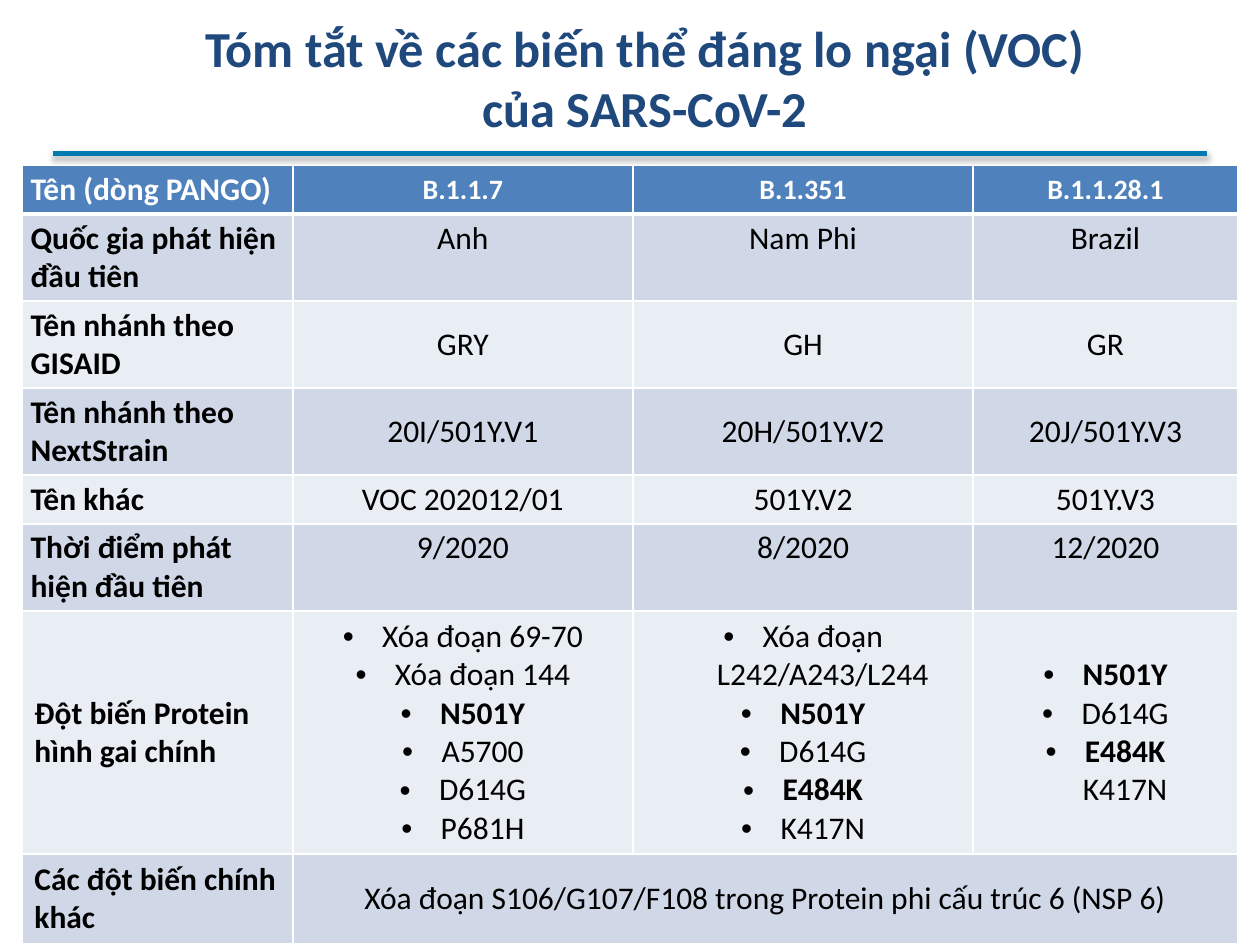
import pptx
import pptx.dml.color
import pptx.enum.shapes
import pptx.enum.text
import pptx.oxml
import pptx.oxml.ns
import pptx.util

Pt = pptx.util.Pt
RGB = pptx.dml.color.RGBColor
ALIGN = pptx.enum.text.PP_ALIGN
ANCHOR = pptx.enum.text.MSO_ANCHOR

WHITE = RGB(0xFF, 0xFF, 0xFF)
BLACK = RGB(0, 0, 0)
NAVY = RGB(0x1F, 0x49, 0x7D)
TEAL = RGB(0x00, 0x7A, 0xB0)
HEADER = RGB(0x4F, 0x81, 0xBD)
BAND_DARK = RGB(0xD0, 0xD8, 0xE8)
BAND_LIGHT = RGB(0xE9, 0xED, 0xF4)
FONT = "Calibri"
NS = pptx.oxml.ns.nsdecls("a")

COL_WIDTHS = [154.8, 194.4, 194.4, 151.2]
ROW_HEIGHTS = [27.5, 48.5, 49.5, 49.5, 27.5, 49.5, 139, 50.4]
ROWS = [
    ["Tên (dòng PANGO)", "B.1.1.7", "B.1.351", "B.1.1.28.1"],
    ["Quốc gia phát hiện đầu tiên", "Anh", "Nam Phi", "Brazil"],
    ["Tên nhánh theo GISAID", "GRY", "GH", "GR"],
    ["Tên nhánh theo NextStrain", "20I/501Y.V1", "20H/501Y.V2", "20J/501Y.V3"],
    ["Tên khác", "VOC 202012/01", "501Y.V2", "501Y.V3"],
    ["Thời điểm phát hiện đầu tiên", "9/2020", "8/2020", "12/2020"],
    ["Đột biến Protein hình gai chính",
     ["Xóa đoạn 69-70", "Xóa đoạn 144", "N501Y", "A5700", "D614G", "P681H"],
     ["Xóa đoạn L242/A243/L244", "N501Y", "D614G", "E484K", "K417N"],
     ["N501Y", "D614G", "E484K\vK417N"]],
    ["Các đột biến chính khác",
     "Xóa đoạn S106/G107/F108 trong Protein phi cấu trúc 6 (NSP 6)"],
]
KEY_MUTATIONS = {"N501Y", "E484K"}
TOP_ROWS = {1, 4, 5}  # rows whose values sit at the top of the cell
NARROW_LABEL_ROWS = range(6)


def set_font(font, size, color, bold):
    for name, value in dict(name=FONT, size=Pt(size), bold=bold).items():
        setattr(font, name, value)
    font.color.rgb = color


def add_title(s, x, y, w, h):
    title = s.shapes.title
    title.left, title.top, title.width, title.height = map(Pt, (x, y, w, h))
    tf = title.text_frame
    tf.vertical_anchor = ANCHOR.MIDDLE
    tf.auto_size = pptx.enum.text.MSO_AUTO_SIZE.NONE
    p = tf.paragraphs[0]
    p.text = "Tóm tắt về các biến thể đáng lo ngại (VOC)\vcủa SARS-CoV-2"
    p.alignment = ALIGN.CENTER
    for r in p.runs:
        set_font(r.font, 28.8, NAVY, True)


def add_rule(s, x, y, w):
    """Draw the shadowed line under the title."""
    line = s.shapes.add_connector(
        pptx.enum.shapes.MSO_CONNECTOR.STRAIGHT, Pt(x), Pt(y), Pt(x + w), Pt(y))
    line.line.color.rgb = TEAL
    line.line.width = Pt(3)
    line._element.spPr.append(pptx.oxml.parse_xml(
        f'<a:effectLst {NS}><a:outerShdw blurRad="{Pt(3.1)}" dist="{Pt(1.8)}" '
        'dir="5400000" rotWithShape="0"><a:srgbClr val="000000">'
        '<a:alpha val="35000"/></a:srgbClr></a:outerShdw></a:effectLst>'))


def set_borders(cell, bottom):
    tcPr = cell._tc.get_or_add_tcPr()
    widths = {"lnL": 1, "lnR": 1, "lnT": 1, "lnB": bottom}
    for i, (tag, width) in enumerate(widths.items()):
        tcPr.insert(i, pptx.oxml.parse_xml(
            f'<a:{tag} {NS} w="{Pt(width)}"><a:solidFill>'
            f'<a:srgbClr val="{WHITE}"/></a:solidFill></a:{tag}>'))


def add_bullet(p):
    pPr = p._p.get_or_add_pPr()
    pPr.set("marL", str(Pt(22.5)))
    pPr.set("indent", str(Pt(-22.5)))
    for xml in (f'<a:buFont {NS} typeface="Arial"/>', f'<a:buChar {NS} char="•"/>'):
        pPr.append(pptx.oxml.parse_xml(xml))


def fill_cell(cell, content, row, col):
    header, label = row == 0, col == 0
    narrow = row in TOP_ROWS or (label and row in NARROW_LABEL_ROWS)
    side, edge = (5, 2.9) if narrow else (7.2, 3.6)
    top = row in TOP_ROWS and not label
    layout = dict(margin_left=Pt(side), margin_right=Pt(side),
                  margin_top=Pt(edge), margin_bottom=Pt(edge),
                  vertical_anchor=ANCHOR.TOP if top else ANCHOR.MIDDLE)
    for name, value in layout.items():
        setattr(cell, name, value)
    cell.fill.solid()
    cell.fill.fore_color.rgb = HEADER if header else (BAND_LIGHT, BAND_DARK)[row % 2]
    set_borders(cell, 3 if header else 1)

    bulleted = isinstance(content, list)
    tf = cell.text_frame
    for i, text in enumerate(content if bulleted else [content]):
        p = tf.add_paragraph() if i else tf.paragraphs[0]
        p.alignment = ALIGN.LEFT if label else ALIGN.CENTER
        if bulleted:
            add_bullet(p)
        for j, part in enumerate(text.split("\v")):
            if j:
                p.add_line_break()
            r = p.add_run()
            r.text = part
            set_font(r.font, 16 if header and not label else 18,
                     WHITE if header else BLACK,
                     header or label or part in KEY_MUTATIONS)


def add_variant_table(s, x, y, w, h):
    table = s.shapes.add_table(
        len(ROWS), len(COL_WIDTHS), Pt(x), Pt(y), Pt(w), Pt(h)).table
    for column, width in zip(table.columns, COL_WIDTHS):
        column.width = Pt(width)
    for row, height in zip(table.rows, ROW_HEIGHTS):
        row.height = Pt(height)
    last = len(ROWS) - 1
    table.cell(last, 1).merge(table.cell(last, 3))
    for row, contents in enumerate(ROWS):
        for col, content in enumerate(contents):
            fill_cell(table.cell(row, col), content, row, col)


def main():
    prs = pptx.Presentation()
    prs.slide_width, prs.slide_height = Pt(720), Pt(540)
    s = prs.slides.add_slide(prs.slide_layouts[5])
    add_rule(s, 30.2, 87.8, 659.5)
    add_title(s, 8.6, 20.9, 720, 46.8)
    add_variant_table(s, 12.5, 94.5, sum(COL_WIDTHS), sum(ROW_HEIGHTS))
    prs.save("out.pptx")


if __name__ == "__main__":
    main()
